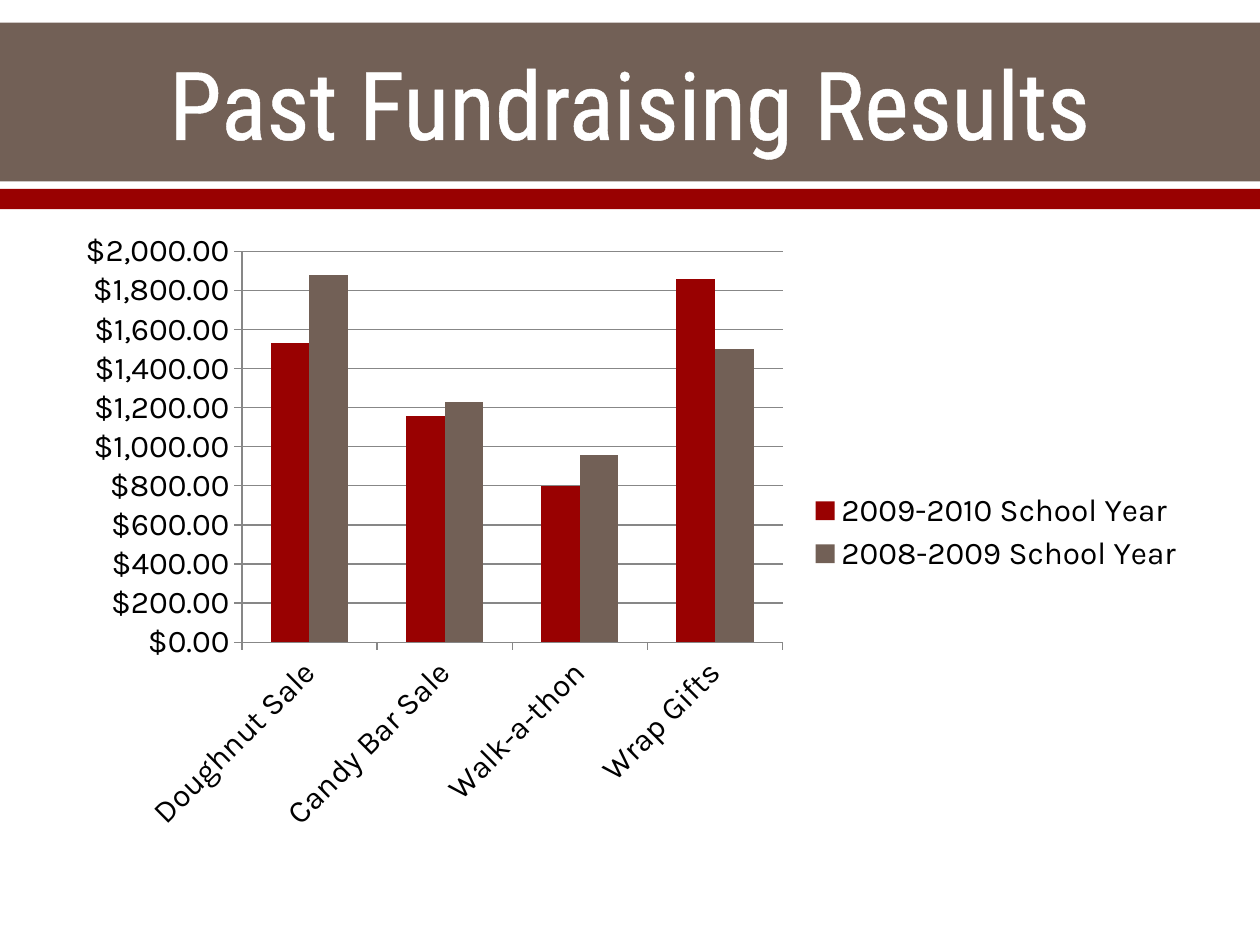
from lxml import etree
from pptx import Presentation
from pptx.chart.data import CategoryChartData
from pptx.dml.color import RGBColor
from pptx.enum.chart import XL_CHART_TYPE as ChartType
from pptx.enum.chart import XL_LEGEND_POSITION as LegendPosition
from pptx.enum.chart import XL_TICK_MARK as TickMark
from pptx.enum.shapes import MSO_SHAPE as ShapeKind
from pptx.enum.text import MSO_ANCHOR as Anchor
from pptx.enum.text import MSO_AUTO_SIZE as AutoSize
from pptx.enum.text import PP_ALIGN as Align
from pptx.oxml.ns import qn
from pptx.util import Inches, Pt

RED = RGBColor(0x99, 0x01, 0x01)
BROWN = RGBColor(0x72, 0x60, 0x56)
WHITE = RGBColor(0xFF, 0xFF, 0xFF)
BLACK = RGBColor(0, 0, 0)
GRAY = RGBColor(0x87, 0x87, 0x87)

TITLE_ONLY = 5
COLUMNS, ROWS = 20, 15  # half-inch grid on a 10 x 7.5 inch slide


def apply(target, values):
    for name, value in values.items():
        setattr(target, name, value)


class SlideBuilder:
    title_font = {"name": "Roboto Condensed", "size": Pt(54), "bold": False}
    chart_font = {"name": "Karla", "size": Pt(18), "bold": False}

    def __init__(self, presentation):
        self.column = presentation.slide_width / COLUMNS
        self.row = presentation.slide_height / ROWS
        self.slide = presentation.slides.add_slide(
            presentation.slide_layouts[TITLE_ONLY])

    def place(self, left, top, width, height):
        """Turn grid columns and rows into slide lengths."""
        return (round(left * self.column), round(top * self.row),
                round(width * self.column), round(height * self.row))

    def band(self, top, height, color):
        shape = self.slide.shapes.add_shape(
            ShapeKind.RECTANGLE, *self.place(0, top, COLUMNS, height))
        shape.shadow.inherit = False
        shape.fill.solid()
        shape.fill.fore_color.rgb = color
        shape.line.fill.background()

    def title(self, text, box):
        title = self.slide.shapes.title
        apply(title, dict(zip(("left", "top", "width", "height"), self.place(*box))))
        frame = title.text_frame
        apply(frame, {"text": text, "word_wrap": True, "auto_size": AutoSize.NONE,
                      "vertical_anchor": Anchor.MIDDLE})
        paragraph = frame.paragraphs[0]
        paragraph.alignment = Align.CENTER
        font = paragraph.runs[0].font
        apply(font, self.title_font)
        font.color.rgb = WHITE

        # Thin white outline around the letters
        properties = paragraph.runs[0]._r.get_or_add_rPr()
        outline = etree.Element(qn("a:ln"), w=str(Pt(1.1)))
        fill = etree.SubElement(outline, qn("a:solidFill"))
        etree.SubElement(fill, qn("a:srgbClr"), val=str(WHITE))
        properties.insert(0, outline)

        # Bring the title in front of the bands
        self.slide.shapes._spTree.append(title._element)

    def column_chart(self, categories, series, box):
        data = CategoryChartData(number_format='"$"#,##0.00')
        data.categories = categories
        for name, values, _ in series:
            data.add_series(name, values)
        chart = self.slide.shapes.add_chart(
            ChartType.COLUMN_CLUSTERED, *self.place(*box), data).chart
        apply(chart, {"has_title": False, "has_legend": True})
        apply(chart.font, self.chart_font)
        chart.font.color.rgb = BLACK
        apply(chart.legend, {"position": LegendPosition.RIGHT,
                             "include_in_layout": False})

        # Bars
        plot = chart.plots[0]
        apply(plot, {"gap_width": 150, "overlap": 0, "vary_by_categories": False})
        for bars, (_, _, color) in zip(plot.series, series):
            bars.invert_if_negative = False
            bars.format.fill.solid()
            bars.format.fill.fore_color.rgb = color

        # Axes
        value_axis, category_axis = chart.value_axis, chart.category_axis
        apply(value_axis, {"minimum_scale": 0, "maximum_scale": 2000,
                           "major_unit": 200, "has_major_gridlines": True})
        apply(value_axis.tick_labels, {"number_format": '"$"#,##0.00',
                                       "number_format_is_linked": False})
        for axis in (value_axis, category_axis):
            apply(axis, {"major_tick_mark": TickMark.OUTSIDE,
                         "minor_tick_mark": TickMark.NONE})
        for part in (value_axis, category_axis, value_axis.major_gridlines):
            part.format.line.color.rgb = GRAY
            part.format.line.width = Pt(0.75)

        # Slanted category labels
        apply(category_axis.tick_labels.font, self.chart_font)
        category_axis.tick_labels.font.color.rgb = BLACK
        body = category_axis._element.find(qn("c:txPr")).find(qn("a:bodyPr"))
        body.set("rot", str(-45 * 60000))


def main():
    presentation = Presentation()
    apply(presentation, {"slide_width": Inches(10), "slide_height": Inches(7.5)})
    builder = SlideBuilder(presentation)

    # Header
    builder.band(0.36, 2.52, BROWN)
    builder.band(3, 0.32, RED)
    builder.title("Past Fundraising Results", (1, 0.4, 18, 2.44))

    # Results by sale and school year
    builder.column_chart(
        ["Doughnut Sale", "Candy Bar Sale", "Walk-a-thon", "Wrap Gifts"],
        [("2009-2010 School Year", (1530, 1160, 800, 1860), RED),
         ("2008-2009 School Year", (1880, 1230, 960, 1500), BROWN)],
        (1, 3.5, 18, 9.9))

    presentation.save("out.pptx")


if __name__ == "__main__":
    main()
